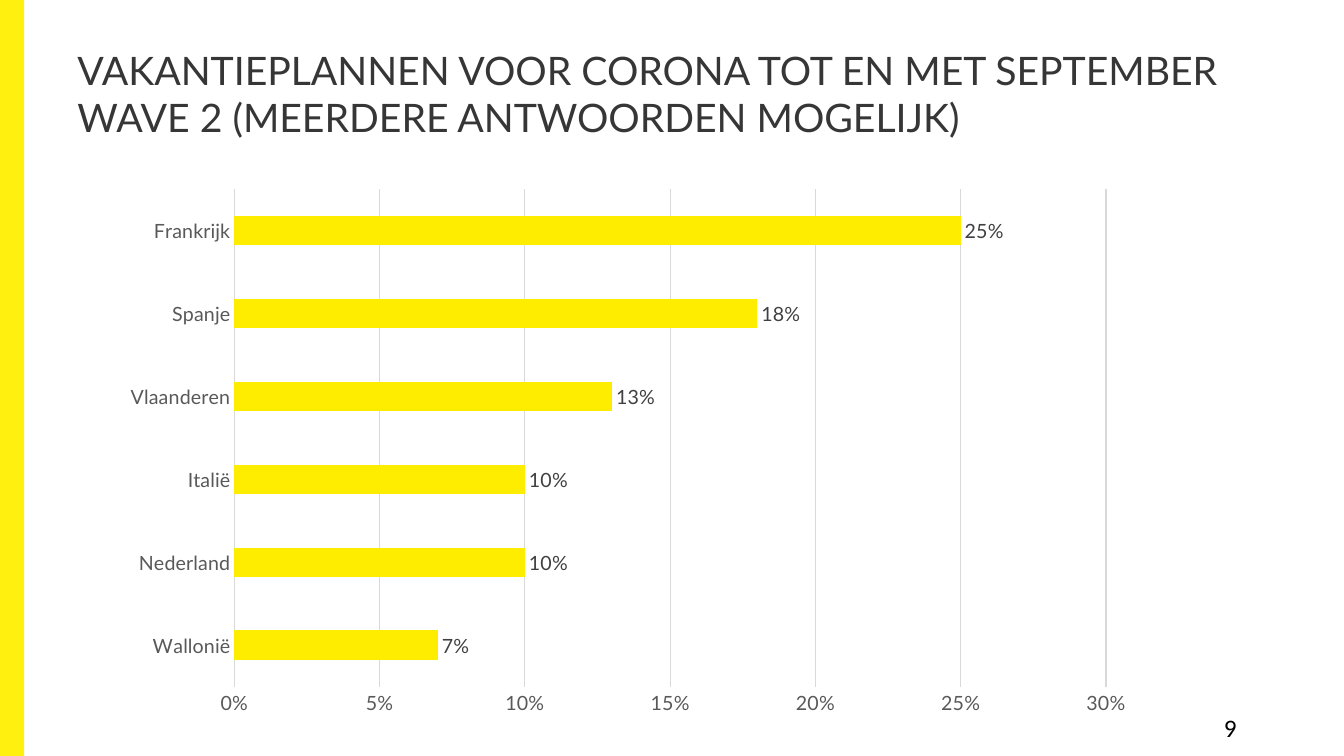
from pptx import Presentation
from pptx.chart.data import CategoryChartData
from pptx.dml.color import RGBColor
from pptx.enum.chart import XL_CHART_TYPE as ChartType
from pptx.enum.chart import XL_LABEL_POSITION as LabelPosition
from pptx.enum.chart import XL_TICK_MARK as TickMark
from pptx.enum.shapes import MSO_SHAPE as Shape
from pptx.enum.text import MSO_ANCHOR as Anchor
from pptx.util import Inches, Pt

COLORS = {
    "band": "FFF010",
    "bar": "FFED00",
    "title": "373636",
    "axis": "595959",
    "label": "404040",
    "grid": "D9D9D9",
    "black": "000000",
}
SHARES = {
    "Wallonië": 0.07,
    "Nederland": 0.10,
    "Italië": 0.10,
    "Vlaanderen": 0.13,
    "Spanje": 0.18,
    "Frankrijk": 0.25,
}


def color(name):
    return RGBColor.from_string(COLORS[name])


def style_font(font, size, tint, name="Lato"):
    font.name = name
    font.size = Pt(size)
    font.bold = False
    font.color.rgb = color(tint)


def style_line(line, tint):
    line.color.rgb = color(tint)
    line.width = Pt(0.75)


def add_band(page, left, top, width, height):
    band = page.shapes.add_shape(
        Shape.RECTANGLE, Inches(left), Inches(top), Inches(width), Inches(height)
    )
    band.shadow.inherit = False
    band.fill.solid()
    band.fill.fore_color.rgb = color("band")
    band.line.fill.background()


def add_text(page, text, *, left, top, width, height, size, tint,
             name="Lato", anchor=Anchor.TOP):
    box = page.shapes.add_textbox(
        Inches(left), Inches(top), Inches(width), Inches(height)
    )
    frame = box.text_frame
    frame.word_wrap = True
    frame.vertical_anchor = anchor
    span = frame.paragraphs[0].add_run()
    span.text = text
    style_font(span.font, size, tint, name)


def style_axis(axis):
    axis.major_tick_mark = TickMark.NONE
    axis.minor_tick_mark = TickMark.NONE
    style_font(axis.tick_labels.font, 14, "axis")


def add_bar_chart(page, shares, left, top, width, height):
    data = CategoryChartData(number_format="0%")
    data.categories = list(shares)
    data.add_series("Series 1", list(shares.values()))
    chart = page.shapes.add_chart(
        ChartType.BAR_CLUSTERED,
        Inches(left), Inches(top), Inches(width), Inches(height), data,
    ).chart
    chart.has_legend = False
    chart.has_title = False
    style_font(chart.font, 14, "black")

    countries = chart.category_axis
    style_axis(countries)
    countries.has_major_gridlines = False
    style_line(countries.format.line, "grid")

    percent = chart.value_axis
    style_axis(percent)
    percent.minimum_scale = 0
    percent.maximum_scale = 0.3
    percent.major_unit = 0.05
    percent.has_major_gridlines = True
    percent.format.line.fill.background()
    style_line(percent.major_gridlines.format.line, "grid")
    percent.tick_labels.number_format = "0%"
    percent.tick_labels.number_format_is_linked = False

    plot = chart.plots[0]
    plot.gap_width = 182
    plot.vary_by_categories = False
    bars = plot.series[0]
    bars.format.fill.solid()
    bars.format.fill.fore_color.rgb = color("bar")
    labels = bars.data_labels
    labels.show_value = True
    labels.position = LabelPosition.OUTSIDE_END
    labels.number_format = "0%"
    labels.number_format_is_linked = False
    style_font(labels.font, 14, "label")


def main():
    deck = Presentation()
    deck.slide_width = Inches(13.33)
    deck.slide_height = Inches(7.5)
    page = deck.slides.add_slide(deck.slide_layouts[6])
    add_band(page, 0, 0, 0.24, 7.5)
    add_text(page, "9", left=12.04, top=7.02, width=0.63, height=0.4,
             size=18, tint="black", name="Calibri")
    add_text(
        page,
        "VAKANTIEPLANNEN VOOR CORONA TOT EN MET SEPTEMBER "
        "WAVE 2 (MEERDERE ANTWOORDEN MOGELIJK)",
        left=0.67, top=0.3, width=12, height=1.25,
        size=28, tint="title", anchor=Anchor.MIDDLE,
    )
    add_bar_chart(page, SHARES, 1.09, 1.77, 10.28, 5.43)
    deck.save("out.pptx")


if __name__ == "__main__":
    main()
